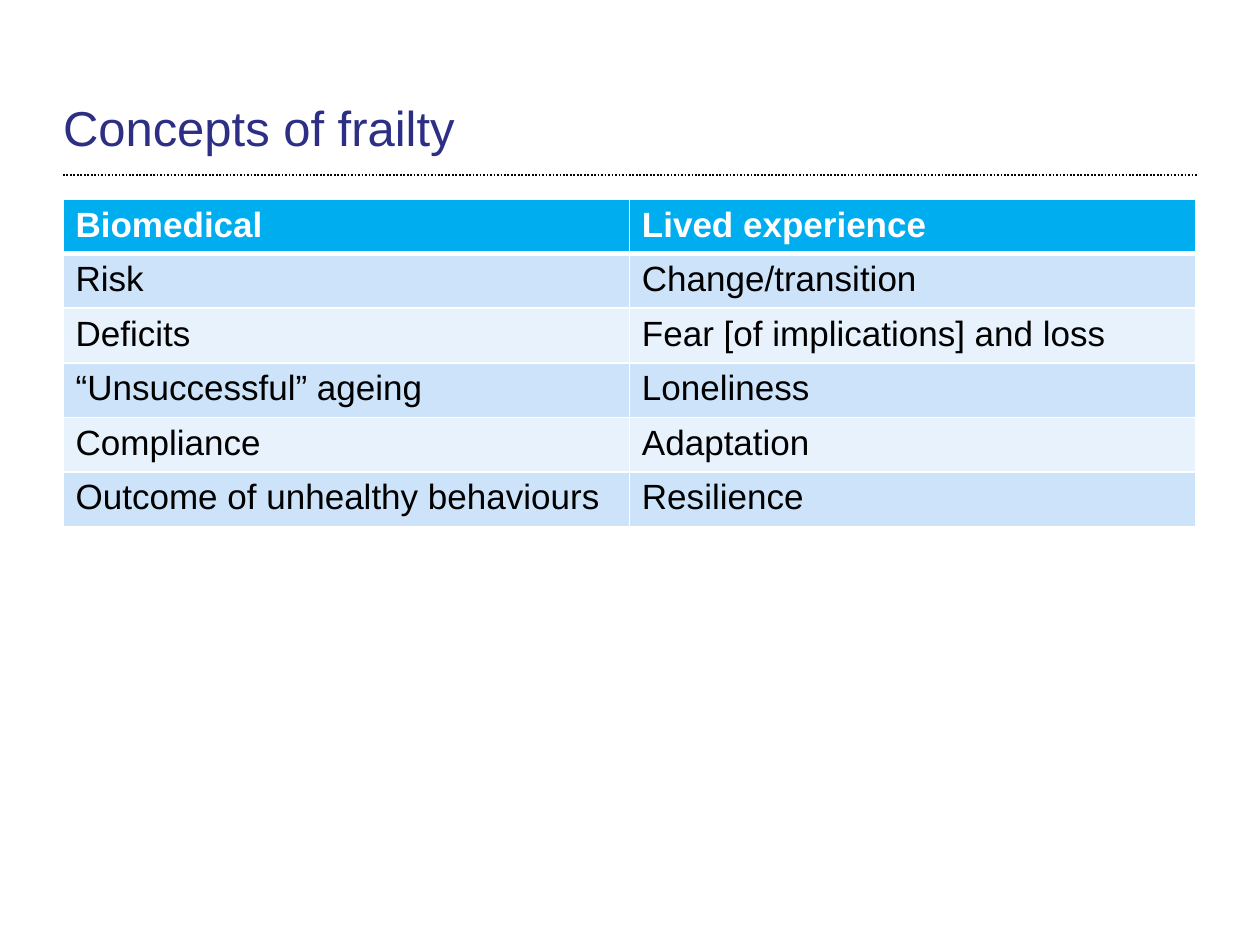
from lxml import etree
from pptx import Presentation
from pptx import util as u
from pptx.dml.color import RGBColor
from pptx.enum import dml, shapes, text
from pptx.oxml import ns

COLORS = {
    "title": "2D2F84",
    "rule": "000000",
    "header": "00AEEF",
    "header_text": "FFFFFF",
    "body_text": "000000",
    "odd_row": "CCE3F9",
    "even_row": "E7F2FC",
    "border": "FFFFFF",
}
CONCEPTS = [
    ("Biomedical", "Lived experience"),
    ("Risk", "Change/transition"),
    ("Deficits", "Fear [of implications] and loss"),
    ("“Unsuccessful” ageing", "Loneliness"),
    ("Compliance", "Adaptation"),
    ("Outcome of unhealthy behaviours", "Resilience"),
]
LEFT, WIDTH = u.Inches(0.5), u.Inches(8.99)


def rgb(name):
    return RGBColor.from_string(COLORS[name])


class SlideBuilder:
    font_name = "Arial"

    def __init__(self, slide):
        self.slide = slide

    def format_text(self, paragraph, size, color, bold=False):
        values = {"name": self.font_name, "size": u.Pt(size), "bold": bold}
        for attribute, value in values.items():
            setattr(paragraph.font, attribute, value)
        paragraph.font.color.rgb = rgb(color)

    def title(self, wording, top, height):
        heading = self.slide.shapes.title
        place = {"left": LEFT, "top": top, "width": WIDTH, "height": height}
        for attribute, value in place.items():
            setattr(heading, attribute, value)
        frame = heading.text_frame
        frame.text = wording
        layout = {
            "margin_left": 0, "margin_top": 0,
            "margin_right": 0, "margin_bottom": 0,
            "word_wrap": True,
            "auto_size": text.MSO_AUTO_SIZE.NONE,
            "vertical_anchor": text.MSO_ANCHOR.BOTTOM,
        }
        for attribute, value in layout.items():
            setattr(frame, attribute, value)
        frame.paragraphs[0].alignment = text.PP_ALIGN.LEFT
        self.format_text(frame.paragraphs[0], 28, "title")

    def dotted_rule(self, y):
        rule = self.slide.shapes.add_connector(
            shapes.MSO_CONNECTOR.STRAIGHT, LEFT, y, u.Inches(9.5), y)
        rule.line.color.rgb = rgb("rule")
        rule.line.width = u.Pt(1)
        rule.line.dash_style = dml.MSO_LINE.ROUND_DOT
        etree.SubElement(rule._element.spPr, ns.qn("a:effectLst"))

    def cell_borders(self, cell, widths):
        """Draw the borders; must run before the cell's fill is set."""
        properties = cell._tc.get_or_add_tcPr()
        for side, points in widths.items():
            edge = etree.SubElement(properties, ns.qn(f"a:ln{side}"), w=str(u.Pt(points)))
            fill = etree.SubElement(edge, ns.qn("a:solidFill"))
            etree.SubElement(fill, ns.qn("a:srgbClr"), val=COLORS["border"])

    def table(self, rows, top, height):
        grid = self.slide.shapes.add_table(
            len(rows), len(rows[0]), LEFT, top, WIDTH, height).table
        for r, row in enumerate(rows):
            is_header = r == 0
            fill = "header" if is_header else "odd_row" if r % 2 else "even_row"
            color = "header_text" if is_header else "body_text"
            widths = {"L": 1, "R": 1, "T": 3 if r == 1 else 1, "B": 3 if is_header else 1}
            for c, wording in enumerate(row):
                cell = grid.cell(r, c)
                self.cell_borders(cell, widths)
                cell.fill.solid()
                cell.fill.fore_color.rgb = rgb(fill)
                cell.text = wording
                self.format_text(cell.text_frame.paragraphs[0], 20, color, is_header)


def main():
    deck = Presentation()
    deck.slide_width, deck.slide_height = u.Inches(10), u.Inches(7.5)
    title_only = deck.slide_layouts[5]
    builder = SlideBuilder(deck.slides.add_slide(title_only))
    builder.dotted_rule(u.Inches(1.39))
    builder.title("Concepts of frailty", u.Inches(0.27), u.Inches(0.97))
    builder.table(CONCEPTS, u.Inches(1.58), u.Inches(2.6))
    deck.save("out.pptx")


if __name__ == "__main__":
    main()
